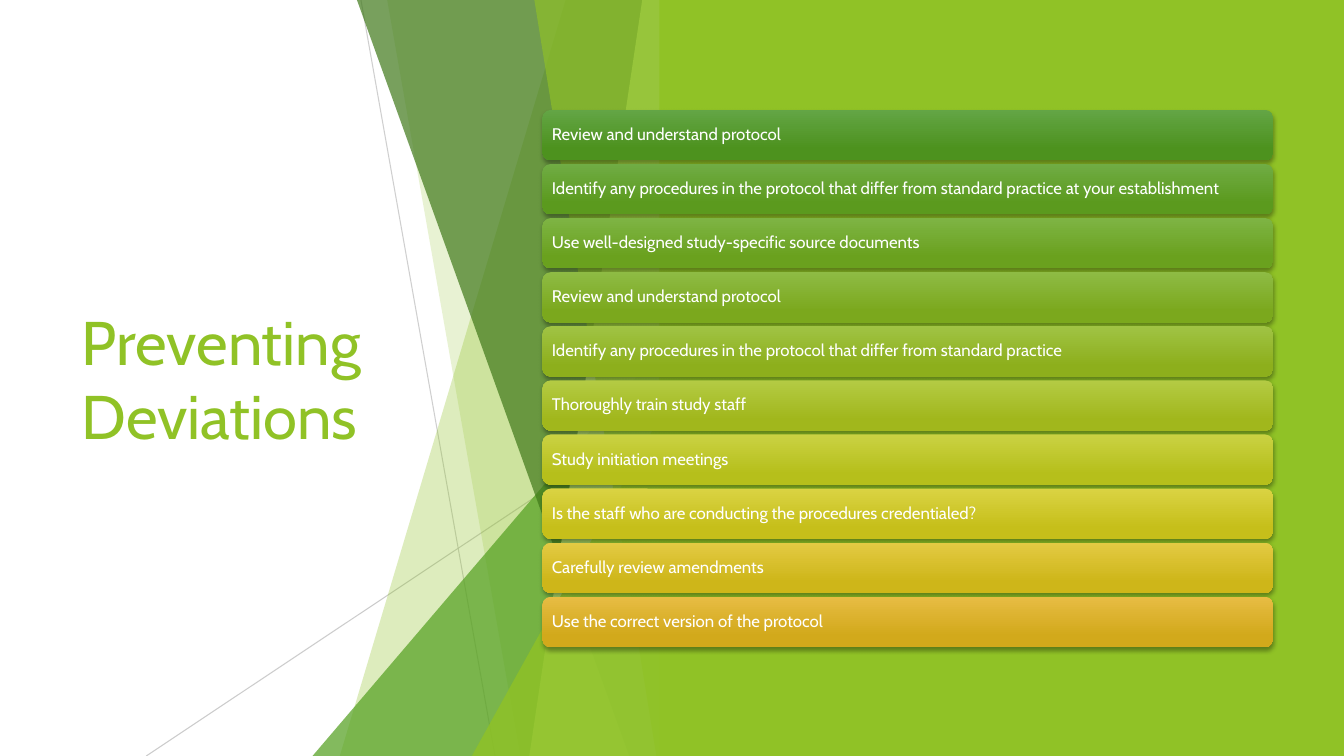
from lxml import etree
from pptx import Presentation
from pptx import util as u
from pptx.dml import color
from pptx.enum import shapes, text
from pptx.oxml import ns

GREEN = "90C226"
FACET_RIGHT = 6.66
SLIDE_HEIGHT = 7.5


def rgb(value):
    return color.RGBColor.from_string(value)


def add_child(parent, tag, **attributes):
    return etree.SubElement(parent, ns.qn(tag), {k: str(v) for k, v in attributes.items()})


class SlideBuilder:
    font_name = "Cabin"

    def __init__(self, slide):
        self.slide = slide

    def set_font(self, paragraph, size, colour):
        paragraph.font.name = self.font_name
        paragraph.font.size = u.Pt(size)
        paragraph.font.color.rgb = rgb(colour)

    def set_opacity(self, fill, colour, opacity):
        fill.solid()
        fill.fore_color.rgb = rgb(colour)
        for element in fill._xPr.iter(ns.qn("a:srgbClr")):
            add_child(element, "a:alpha", val=opacity * 1000)

    def paint(self, shape, colour, opacity=100):
        shape.shadow.inherit = False
        shape.line.fill.background()
        self.set_opacity(shape.fill, colour, opacity)

    def title(self, wording, left, top, width, height):
        title = self.slide.shapes.title
        title.left, title.top = u.Inches(left), u.Inches(top)
        title.width, title.height = u.Inches(width), u.Inches(height)
        frame = title.text_frame
        frame.text = wording
        frame.word_wrap = True
        frame.auto_size = text.MSO_AUTO_SIZE.NONE
        frame.vertical_anchor = text.MSO_ANCHOR.MIDDLE
        frame.paragraphs[0].alignment = text.PP_ALIGN.LEFT
        self.set_font(frame.paragraphs[0], 44, GREEN)

    def line(self, x1, y1, x2, y2, opacity):
        connector = self.slide.shapes.add_connector(
            shapes.MSO_CONNECTOR.STRAIGHT,
            u.Inches(x1), u.Inches(y1), u.Inches(x2), u.Inches(y2))
        connector.line.width = u.Pt(0.75)
        self.set_opacity(connector.line.fill, "BFBFBF", opacity)
        add_child(connector._element.spPr, "a:effectLst")

    def facet(self, top_x, bottom_x, colour, opacity):
        """A full-height panel with a slanted left edge."""
        corners = [(top_x, 0), (FACET_RIGHT, 0),
                   (FACET_RIGHT, SLIDE_HEIGHT), (bottom_x, SLIDE_HEIGHT)]
        points = [(u.Inches(x), u.Inches(y)) for x, y in corners]
        builder = self.slide.shapes.build_freeform(*points[0])
        builder.add_line_segments(points[1:], close=True)
        self.paint(builder.convert_to_shape(), colour, opacity)

    def preset(self, kind, left, top, width, height):
        return self.slide.shapes.add_shape(
            kind, u.Inches(left), u.Inches(top), u.Inches(width), u.Inches(height))

    def corner_triangle(self, left, top, colour, opacity):
        """A triangle standing on the bottom edge, with its apex at the right."""
        triangle = self.preset(shapes.MSO_SHAPE.ISOSCELES_TRIANGLE, left, top,
                               FACET_RIGHT - left, SLIDE_HEIGHT - top)
        triangle.adjustments[0] = 1
        self.paint(triangle, colour, opacity)

    def panel(self, left, top, width, height, colour):
        self.paint(self.preset(shapes.MSO_SHAPE.RECTANGLE, left, top, width, height), colour)

    def bar(self, wording, top, light, dark):
        bar = self.preset(shapes.MSO_SHAPE.ROUNDED_RECTANGLE, 5.38, top, 7.25, 0.5)
        bar.line.fill.background()
        bar.fill.gradient()
        bar.fill.gradient_angle = 270
        for stop, position, colour in zip(bar.fill.gradient_stops, (0, 0.78), (light, dark)):
            stop.position = position
            stop.color.rgb = rgb(colour)

        # Soft shadow below the bar
        bar.shadow.inherit = False
        effects = bar._element.spPr.find(ns.qn("a:effectLst"))
        shadow = add_child(effects, "a:outerShdw", blurRad=u.Pt(3), dist=u.Pt(2),
                           dir=90 * 60000, rotWithShape=0)
        shade = add_child(shadow, "a:srgbClr", val="000000")
        add_child(shade, "a:alpha", val=35000)

        frame = bar.text_frame
        frame.text = wording
        frame.word_wrap = True
        frame.margin_left = frame.margin_right = u.Inches(0.07)
        frame.margin_top = frame.margin_bottom = u.Inches(0.05)
        frame.vertical_anchor = text.MSO_ANCHOR.MIDDLE
        paragraph = frame.paragraphs[0]
        paragraph.alignment = text.PP_ALIGN.LEFT
        paragraph.line_spacing = 0.9
        self.set_font(paragraph, 12, "FFFFFF")


BARS = [
    ("Review and understand protocol", "63A545", "4D921E"),
    ("Identify any procedures in the protocol that differ from standard practice "
     "at your establishment", "70AC44", "5B9A1E"),
    ("Use well-designed study-specific source documents", "7EB444", "6AA11E"),
    ("Review and understand protocol", "8EBB44", "7BA81D"),
    ("Identify any procedures in the protocol that differ from standard practice",
     "A0C344", "8DAF1C"),
    ("Thoroughly train study staff", "B4CB44", "A1B71C"),
    ("Study initiation meetings", "CAD243", "B6BF1B"),
    ("Is the staff who are conducting the procedures credentialed?", "DAD343", "C6BF1A"),
    ("Carefully review amendments", "E3CA43", "CEB619"),
    ("Use the correct version of the protocol", "E7BC43", "D2A91B"),
]


def main():
    presentation = Presentation()
    presentation.slide_width = u.Inches(13.33)
    presentation.slide_height = u.Inches(SLIDE_HEIGHT)
    builder = SlideBuilder(presentation.slides.add_slide(presentation.slide_layouts[5]))

    builder.title("Preventing Deviations", 0.71, 1.51, 3.88, 4.48)

    # Faceted divider
    builder.line(3.58, 0, 4.91, SLIDE_HEIGHT, 75)
    builder.line(FACET_RIGHT, 4.03, 1.45, SLIDE_HEIGHT, 80)
    builder.facet(5.61, 3.37, GREEN, 30)
    builder.facet(3.84, 5.16, GREEN, 20)
    builder.corner_triangle(3.1, 3.33, "54A021", 72)
    builder.facet(3.54, 6.24, "3F7819", 70)
    builder.facet(6.37, 5.25, "C0E474", 70)
    builder.facet(5.3, 6.51, GREEN, 65)
    builder.corner_triangle(4.68, 3.93, GREEN, 80)

    # Green right side
    builder.panel(6.54, 0, 6.79, SLIDE_HEIGHT, GREEN)

    # Stack of prevention steps, evenly spaced
    first_top, last_top = 1.09, 5.92
    pitch = (last_top - first_top) / (len(BARS) - 1)
    for index, (wording, light, dark) in enumerate(BARS):
        builder.bar(wording, first_top + index * pitch, light, dark)

    presentation.save("out.pptx")


if __name__ == "__main__":
    main()
